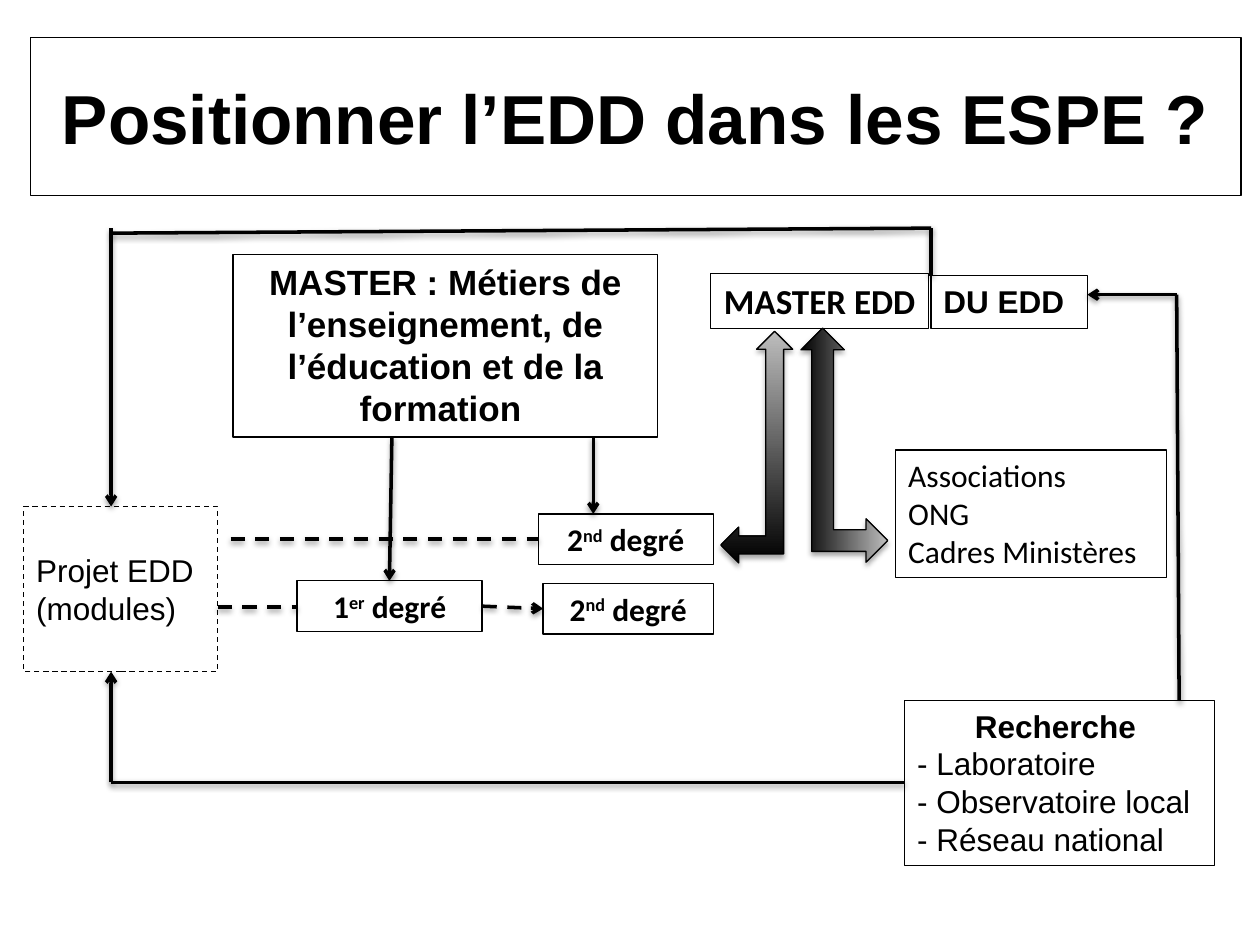
from dataclasses import dataclass

from lxml import etree
from pptx import Presentation
from pptx.dml.color import RGBColor
from pptx.enum.dml import MSO_LINE
from pptx.enum.shapes import MSO_CONNECTOR, MSO_SHAPE
from pptx.enum.text import MSO_ANCHOR, PP_ALIGN
from pptx.oxml.ns import qn
from pptx.util import Cm, Pt

DASH = MSO_LINE.DASH
STRAIGHT = MSO_CONNECTOR.STRAIGHT
BENT_ARROW = MSO_SHAPE.LEFT_UP_ARROW
TOP, MIDDLE = MSO_ANCHOR.TOP, MSO_ANCHOR.MIDDLE
LEFT, CENTER = PP_ALIGN.LEFT, PP_ALIGN.CENTER


@dataclass(frozen=True)
class Theme:
    ink: RGBColor = RGBColor(0, 0, 0)
    silver: RGBColor = RGBColor(0xBD, 0xBD, 0xBD)
    sans: str = "Arial"
    humanist: str = "Calibri"
    title: float = 39.6
    heading: float = 20
    body: float = 18
    outline: float = 0.75
    link: float = 2


THEME = Theme()


@dataclass(frozen=True)
class Span:
    text: str
    bold: bool = False
    raised: bool = False


@dataclass(frozen=True)
class Line:
    spans: tuple[Span, ...]
    align: PP_ALIGN = LEFT


@dataclass(frozen=True)
class Box:
    area: tuple[float, float, float, float]
    lines: tuple[Line, ...]
    size: float = THEME.body
    font: str = THEME.sans
    anchor: MSO_ANCHOR = TOP
    dashed: bool = False
    wrap: bool = True


@dataclass(frozen=True)
class Link:
    start: tuple[float, float]
    end: tuple[float, float]
    arrow: bool = False
    dashed: bool = False


@dataclass(frozen=True)
class Exchange:
    area: tuple[float, float, float, float]
    rotation: float = 0


def heading(text: str, align: PP_ALIGN = CENTER) -> Line:
    return Line((Span(text, bold=True),), align)


def plain(*texts: str) -> tuple[Line, ...]:
    return tuple(Line((Span(text),)) for text in texts)


def degree(number: str, suffix: str) -> tuple[Line, ...]:
    spans = Span(number, True), Span(suffix, True, True), Span(" degré", True)
    return (Line(spans, CENTER),)


BOXES = (
    Box((0.61, 0.76, 24.41, 3.18), (heading("Positionner l’EDD dans les ESPE ?"),),
        THEME.title, anchor=MIDDLE),
    Box((4.7, 5.13, 8.56, 3.68),
        (heading("MASTER : Métiers de l’enseignement, de l’éducation et de la formation "),),
        THEME.heading),
    Box((14.33, 5.51, 4.39, 1.12), (heading("MASTER EDD"),),
        THEME.heading, THEME.humanist, wrap=False),
    Box((18.77, 5.56, 3.15, 1.07), (heading("DU EDD", LEFT),)),
    Box((5.99, 11.71, 3.73, 1.02), degree("1", "er"), font=THEME.humanist),
    Box((10.85, 10.36, 3.53, 1.02), degree("2", "nd"), font=THEME.humanist),
    Box((10.95, 11.76, 3.43, 1.02), degree("2", "nd"), font=THEME.humanist),
    Box((0.48, 10.21, 3.91, 3.33), plain("Projet EDD", "(modules)"),
        anchor=MIDDLE, dashed=True),
    Box((18.24, 14.12, 6.25, 3.33),
        (heading("Recherche "),
         *plain("- Laboratoire", "- Observatoire local", "- Réseau national"))),
    Box((18.06, 9.07, 5.46, 2.57), plain("Associations", "ONG", "Cadres Ministères"),
        font=THEME.humanist),
)

LINKS = (
    Link((7.9, 8.81), (7.85, 11.71), arrow=True),
    Link((11.96, 8.81), (11.96, 10.36), arrow=True),
    Link((18.77, 4.6), (2.24, 4.7)),
    Link((18.77, 4.6), (18.77, 5.56)),
    Link((2.24, 4.6), (2.24, 10.21), arrow=True),
    Link((4.65, 10.87), (10.85, 10.87), dashed=True),
    Link((4.39, 12.24), (5.99, 12.24), dashed=True),
    Link((9.73, 12.22), (10.95, 12.27), arrow=True, dashed=True),
    Link((23.77, 14.12), (23.72, 5.94)),
    Link((23.72, 5.94), (21.92, 5.94), arrow=True),
    Link((18.24, 15.77), (2.24, 15.77)),
    Link((2.24, 15.77), (2.24, 13.54), arrow=True),
)

EXCHANGES = (
    Exchange((14.53, 6.68, 1.45, 4.67)),
    Exchange((14.66, 8.1, 4.72, 1.75), rotation=90),
)


def set_stroke(shape, width: float, dashed: bool = False) -> None:
    shape.line.color.rgb = THEME.ink
    shape.line.width = Pt(width)
    if dashed:
        shape.line.dash_style = DASH


def add_shadow(shape, opacity: int, distance: float) -> None:
    effects = etree.SubElement(shape._element.spPr, qn("a:effectLst"))
    shadow = etree.SubElement(
        effects, qn("a:outerShdw"), blurRad=str(Pt(3.1)), dist=str(Pt(distance)),
        dir="5400000", rotWithShape="0")
    color = etree.SubElement(shadow, qn("a:srgbClr"), val=str(THEME.ink))
    etree.SubElement(color, qn("a:alpha"), val=str(opacity * 1000))


def draw_box(slide, box: Box) -> None:
    frame = slide.shapes.add_textbox(*map(Cm, box.area))
    set_stroke(frame, THEME.outline, box.dashed)
    content = frame.text_frame
    content.word_wrap = box.wrap
    content.vertical_anchor = box.anchor
    for index, line in enumerate(box.lines):
        paragraph = content.add_paragraph() if index else content.paragraphs[0]
        paragraph.alignment = line.align
        for span in line.spans:
            run = paragraph.add_run()
            run.text = span.text
            run.font.name = box.font
            run.font.size = Pt(box.size)
            run.font.bold = span.bold
            run.font.color.rgb = THEME.ink
            if span.raised:
                run._r.get_or_add_rPr().set("baseline", "30000")


def draw_link(slide, link: Link) -> None:
    connector = slide.shapes.add_connector(STRAIGHT, *map(Cm, link.start + link.end))
    set_stroke(connector, THEME.link, link.dashed)
    if link.arrow:
        etree.SubElement(connector.line._get_or_add_ln(), qn("a:tailEnd"), type="arrow")
    add_shadow(connector, 38, 1.6)


def draw_exchange(slide, exchange: Exchange) -> None:
    arrow = slide.shapes.add_shape(BENT_ARROW, *map(Cm, exchange.area))
    arrow.rotation = exchange.rotation
    arrow.fill.gradient()
    arrow.fill.gradient_angle = 90
    for stop, color in zip(arrow.fill.gradient_stops, (THEME.ink, THEME.silver)):
        stop.color.rgb = color
    set_stroke(arrow, THEME.outline)
    add_shadow(arrow, 35, 1.8)


def main() -> None:
    deck = Presentation()
    deck.slide_width, deck.slide_height = Cm(25.4), Cm(19.05)
    slide = deck.slides.add_slide(deck.slide_layouts[6])
    for box in BOXES:
        draw_box(slide, box)
    for link in LINKS:
        draw_link(slide, link)
    for exchange in EXCHANGES:
        draw_exchange(slide, exchange)
    deck.save("out.pptx")


if __name__ == "__main__":
    main()
